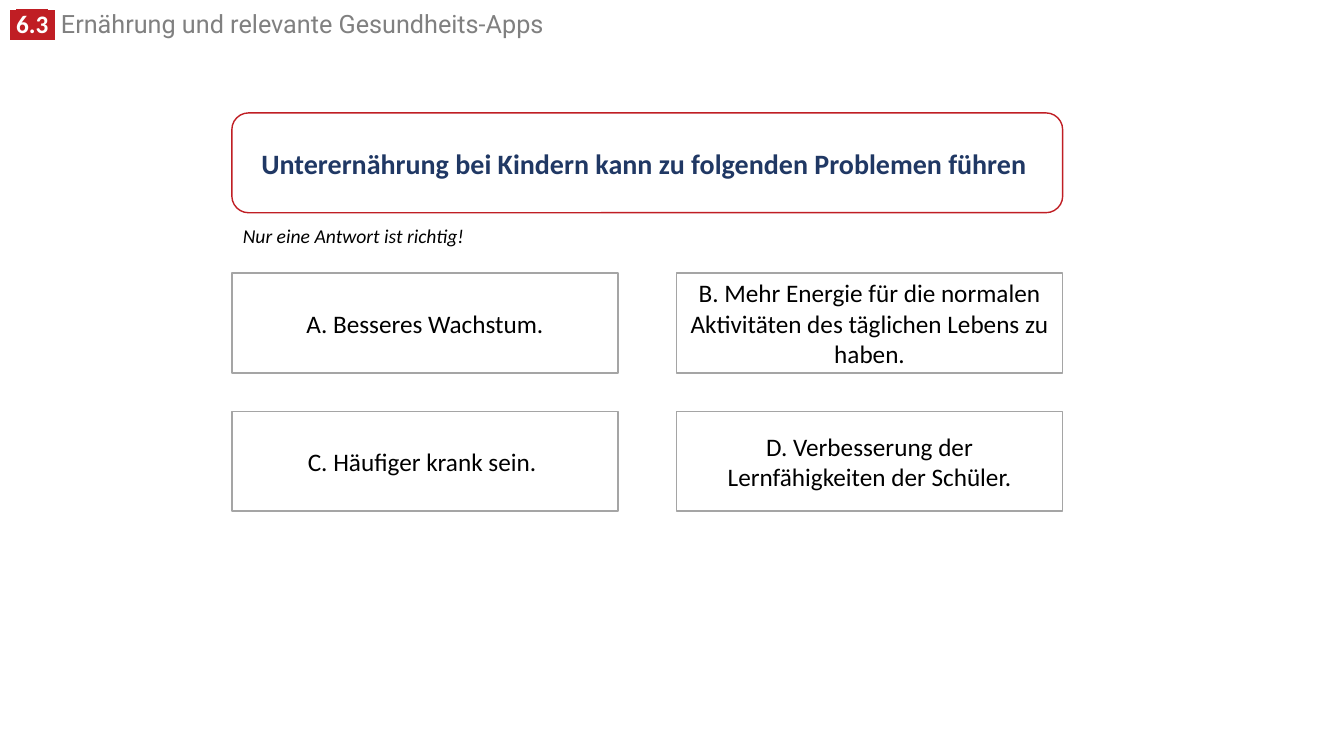
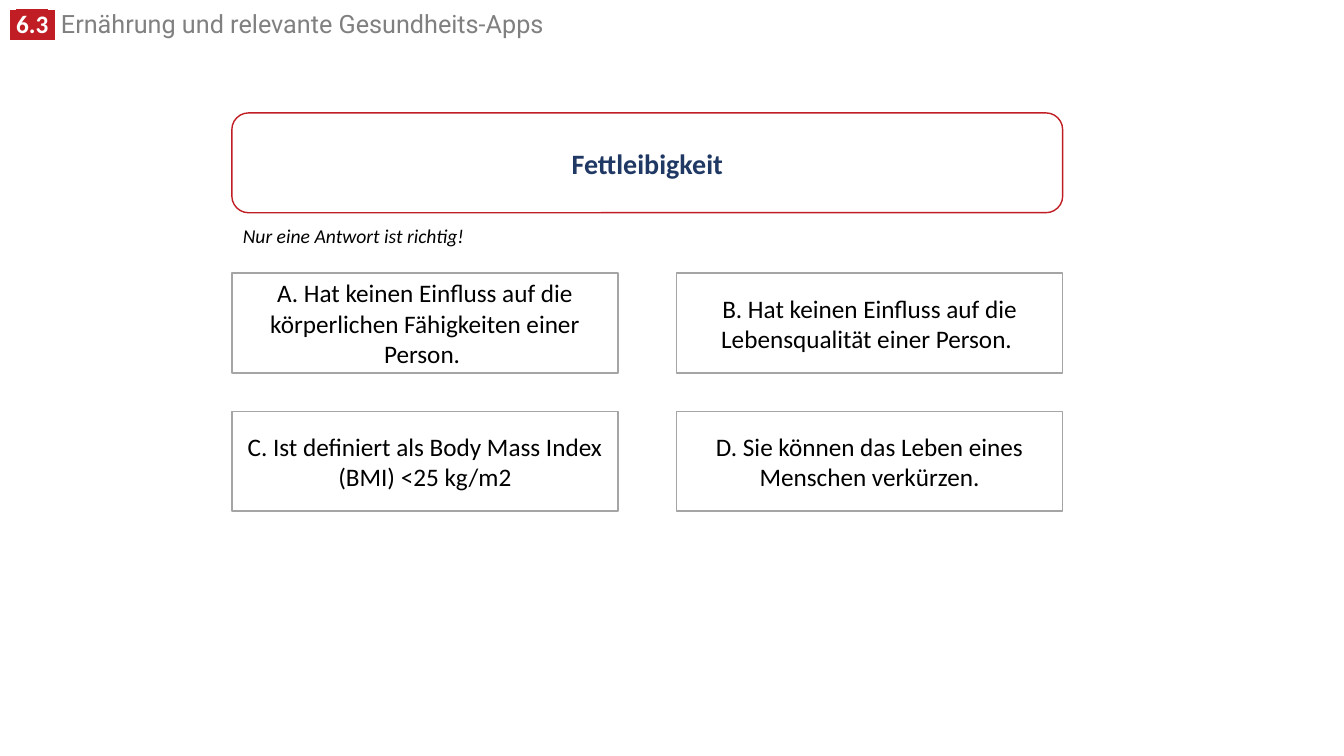
from lxml import etree
from pptx import Presentation
from pptx.dml.color import RGBColor
from pptx.enum.shapes import MSO_SHAPE
from pptx.enum.text import MSO_ANCHOR, MSO_AUTO_SIZE, PP_ALIGN
from pptx.oxml.ns import qn
from pptx.util import Inches, Pt

RECTANGLE = MSO_SHAPE.RECTANGLE
ROUNDED = MSO_SHAPE.ROUNDED_RECTANGLE
MIDDLE = MSO_ANCHOR.MIDDLE
CENTER = PP_ALIGN.CENTER
FIT_SHAPE = MSO_AUTO_SIZE.SHAPE_TO_FIT_TEXT

# Colours and fonts
RED, NAVY, GRAY = "C01E24", "203864", "808080"
BORDER, BLACK, WHITE = "A5A5A5", "000000", "FFFFFF"
BODY_FONT, HEADER_FONT = "Calibri", "Roboto"

# Answer grid
LEFT, WIDTH, HEIGHT = 2.3, 8.24, 0.99
ANSWER_TOP, ANSWER_WIDTH = 2.71, 3.83
COLUMN_STEP, ROW_STEP = WIDTH - ANSWER_WIDTH, 1.37

QUESTIONS = [
    ("Unterernährung bei Kindern kann zu folgenden Problemen führen ",
     ["A. Besseres Wachstum.",
      "B. Mehr Energie für die normalen Aktivitäten des täglichen Lebens zu haben.",
      "C. Häufiger krank sein. ",
      "D. Verbesserung der Lernfähigkeiten der Schüler."]),
    ("Fettleibigkeit",
     ["A. Hat keinen Einfluss auf die körperlichen Fähigkeiten einer Person. ",
      "B. Hat keinen Einfluss auf die Lebensqualität einer Person. ",
      "C. Ist definiert als Body Mass Index (BMI) <25 kg/m2",
      "D. Sie können das Leben eines Menschen verkürzen."]),
]


def color(hex_value):
    return RGBColor.from_string(hex_value)


class QuizDeck:
    def __init__(self):
        self.presentation = Presentation()
        self.presentation.slide_width = Inches(13.33)
        self.presentation.slide_height = Inches(7.5)
        self.slide = None

    def add_slide(self):
        self.slide = self.presentation.slides.add_slide(self.presentation.slide_layouts[6])

    def add_run(self, paragraph, text, size, text_color, font=BODY_FONT,
                bold=False, italic=False, highlight=None):
        run = paragraph.add_run()
        run.text = text
        run.font.size = Pt(size)
        run.font.name = font
        run.font.bold = bold
        run.font.italic = italic
        run.font.color.rgb = color(text_color)
        if highlight:
            mark = etree.Element(qn("a:highlight"))
            etree.SubElement(mark, qn("a:srgbClr"), val=highlight)
            run.font._element.find(qn("a:solidFill")).addnext(mark)

    def add_text_box(self, left, top, width, height, wrap):
        box = self.slide.shapes.add_textbox(
            Inches(left), Inches(top), Inches(width), Inches(height))
        box.text_frame.word_wrap = wrap
        box.text_frame.auto_size = FIT_SHAPE
        return box.text_frame.paragraphs[0]

    def add_header(self):
        paragraph = self.add_text_box(0, 0.09, 9.52, 0.35, True)
        paragraph.line_spacing = 0.8
        for text, font in ((" ", HEADER_FONT), ("6.3", BODY_FONT), (" ", HEADER_FONT)):
            self.add_run(paragraph, text, 18, WHITE, font, bold=True, highlight=RED)
        self.add_run(paragraph, " Ernährung und relevante Gesundheits-Apps",
                     18, GRAY, HEADER_FONT)

    def add_box(self, kind, left, top, width, line_color, text, size, text_color, bold=False):
        shape = self.slide.shapes.add_shape(
            kind, Inches(left), Inches(top), Inches(width), Inches(HEIGHT))
        shape.shadow.inherit = False
        shape.fill.solid()
        shape.fill.fore_color.rgb = color(WHITE)
        shape.line.color.rgb = color(line_color)
        shape.line.width = Pt(1)
        shape.text_frame.word_wrap = True
        shape.text_frame.vertical_anchor = MIDDLE
        paragraph = shape.text_frame.paragraphs[0]
        paragraph.alignment = CENTER
        self.add_run(paragraph, text, size, text_color, bold=bold)

    def add_question(self, text):
        self.add_box(ROUNDED, LEFT, 1.12, WIDTH, RED, text, 20, NAVY, bold=True)

    def add_hint(self):
        paragraph = self.add_text_box(2.31, 2.17, 2.42, 0.34, False)
        self.add_run(paragraph, "Nur eine Antwort ist richtig!", 14, BLACK, italic=True)

    def add_answers(self, answers):
        for index, text in enumerate(answers):
            row, column = divmod(index, 2)
            self.add_box(RECTANGLE, LEFT + column * COLUMN_STEP, ANSWER_TOP + row * ROW_STEP,
                         ANSWER_WIDTH, BORDER, text, 18, BLACK)


def main():
    deck = QuizDeck()
    for question, answers in QUESTIONS:
        deck.add_slide()
        deck.add_header()
        deck.add_question(question)
        deck.add_hint()
        deck.add_answers(answers)
    deck.presentation.save("out.pptx")


if __name__ == "__main__":
    main()
